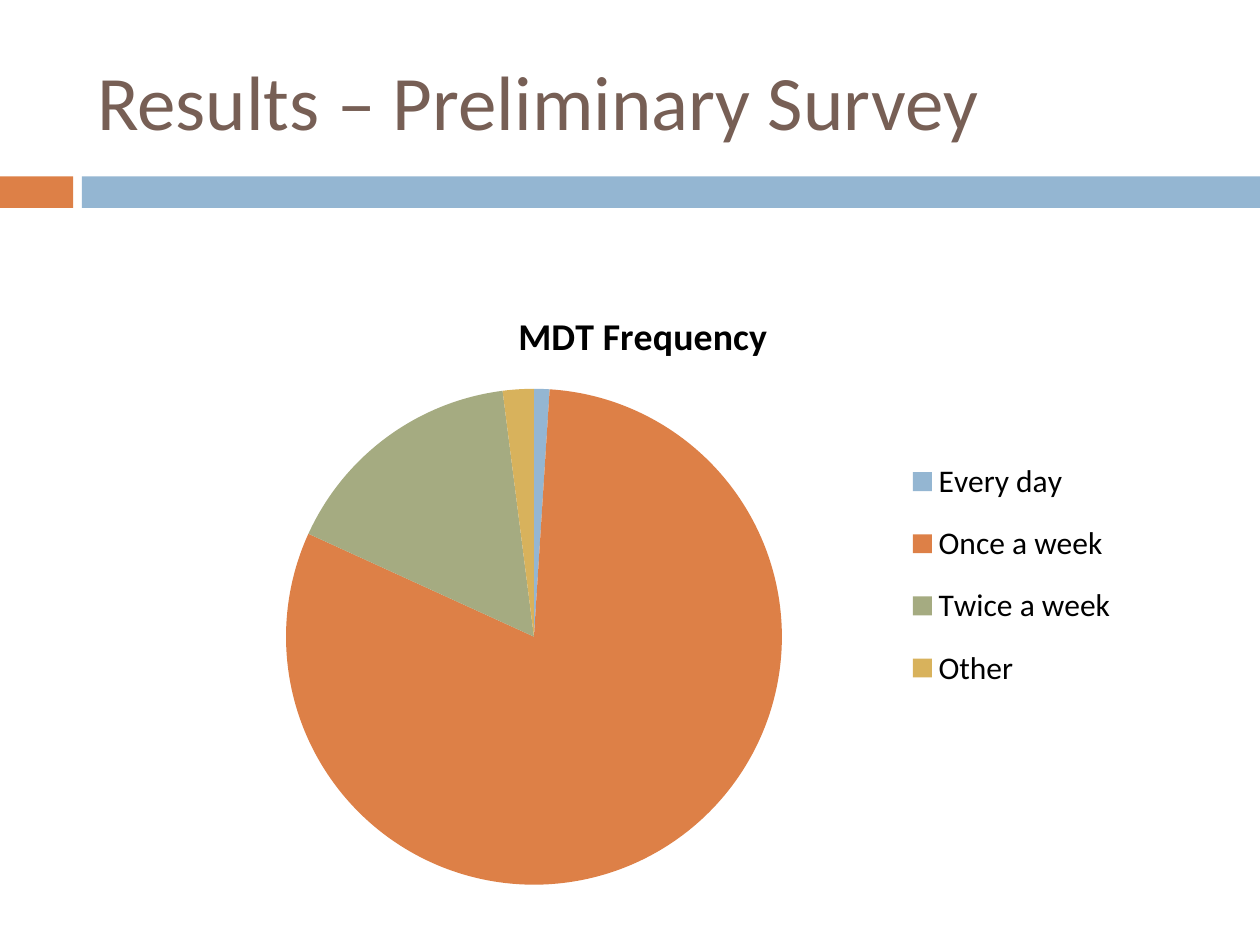
from dataclasses import dataclass

from lxml import etree
from pptx import Presentation
from pptx.chart.data import CategoryChartData
from pptx.dml.color import RGBColor
from pptx.enum.chart import XL_CHART_TYPE, XL_LEGEND_POSITION
from pptx.enum.shapes import MSO_SHAPE
from pptx.enum.text import MSO_ANCHOR, PP_ALIGN
from pptx.oxml.ns import qn
from pptx.util import Inches, Pt

PIE = XL_CHART_TYPE.PIE
RECTANGLE = MSO_SHAPE.RECTANGLE
LEGEND_RIGHT = XL_LEGEND_POSITION.RIGHT
MIDDLE = MSO_ANCHOR.MIDDLE
LEFT = PP_ALIGN.LEFT


@dataclass(frozen=True)
class Theme:
    font: str = "Calibri"
    title_color: str = "775F55"
    text_color: str = "000000"
    blue: str = "94B6D2"
    orange: str = "DD8047"
    green: str = "A5AB81"
    gold: str = "D8B25C"
    title_size: float = 44
    chart_title_size: float = 21.6
    chart_size: float = 18


def set_layout(element, index, **fractions):
    """Place a chart part by fractions of the chart area."""
    for old in element.findall(qn("c:layout")):
        element.remove(old)
    layout = etree.Element(qn("c:layout"))
    manual = etree.SubElement(layout, qn("c:manualLayout"))
    if element.tag == qn("c:plotArea"):
        etree.SubElement(manual, qn("c:layoutTarget")).set("val", "inner")
    for axis in ("x", "y"):
        etree.SubElement(manual, qn(f"c:{axis}Mode")).set("val", "edge")
    for name, value in fractions.items():
        etree.SubElement(manual, qn(f"c:{name}")).set("val", str(value))
    element.insert(index, layout)


class SlideBuilder:
    def __init__(self, slide, theme):
        self.s = slide
        self.theme = theme

    def style_font(self, font, size, color, bold=False):
        font.name = self.theme.font
        font.size = Pt(size)
        font.bold = bold
        font.color.rgb = RGBColor.from_string(color)

    def bar(self, x, y, w, h, color):
        sp = self.s.shapes.add_shape(RECTANGLE, Inches(x), Inches(y), Inches(w), Inches(h))
        sp.shadow.inherit = False
        sp.fill.solid()
        sp.fill.fore_color.rgb = RGBColor.from_string(color)
        sp.line.fill.background()

    def title(self, text, x, y, w, h):
        sp = self.s.shapes.title
        sp.left, sp.top, sp.width, sp.height = (Inches(v) for v in (x, y, w, h))
        tf = sp.text_frame
        tf.text = text
        tf.word_wrap = True
        tf.vertical_anchor = MIDDLE
        p = tf.paragraphs[0]
        p.alignment = LEFT
        self.style_font(p.runs[0].font, self.theme.title_size, self.theme.title_color)

    def pie(self, name, slices, x, y, w, h):
        t = self.theme
        data = CategoryChartData()
        data.categories = [label for label, _, _ in slices]
        data.add_series(name, [value for _, value, _ in slices])
        chart = self.s.shapes.add_chart(
            PIE, Inches(x), Inches(y), Inches(w), Inches(h), data).chart
        self.style_font(chart.font, t.chart_size, t.text_color)

        # Slice colours
        plot = chart.plots[0]
        plot.vary_by_categories = True
        for i, (_, _, color) in enumerate(slices):
            fill = plot.series[0].points[i].format.fill
            fill.solid()
            fill.fore_color.rgb = RGBColor.from_string(color)

        # Chart title and legend
        chart.has_title = True
        tf = chart.chart_title.text_frame
        tf.text = name
        self.style_font(tf.paragraphs[0].runs[0].font, t.chart_title_size, t.text_color, True)
        chart.has_legend = True
        chart.legend.position = LEGEND_RIGHT
        chart.legend.include_in_layout = False
        self.style_font(chart.legend.font, t.chart_size, t.text_color)

        # Placement inside the chart area
        set_layout(chart.chart_title._element, 1, x=0.38, y=0.03)
        set_layout(chart.legend._element, 1, x=0.71, y=0.25, w=0.23, h=0.44)
        set_layout(chart._chartSpace.chart.plotArea, 0, x=0.17, y=0.17, w=0.46, h=0.8)


def main():
    theme = Theme()
    prs = Presentation()
    prs.slide_width, prs.slide_height = Inches(10), Inches(7.5)
    builder = SlideBuilder(prs.slides.add_slide(prs.slide_layouts[5]), theme)

    # Divider below the title
    builder.bar(0, 1.4, 0.58, 0.25, theme.orange)
    builder.bar(0.65, 1.4, 9.35, 0.25, theme.blue)

    builder.title("Results – Preliminary Survey", 0.67, 0.25, 8.92, 1.08)

    # Survey answers
    builder.pie("MDT Frequency", [
        ("Every day", 1, theme.blue),
        ("Once a week", 80, theme.orange),
        ("Twice a week", 16, theme.green),
        ("Other", 2, theme.gold),
    ], 0.67, 2.25, 8.92, 4.92)

    prs.save("out.pptx")


if __name__ == "__main__":
    main()
